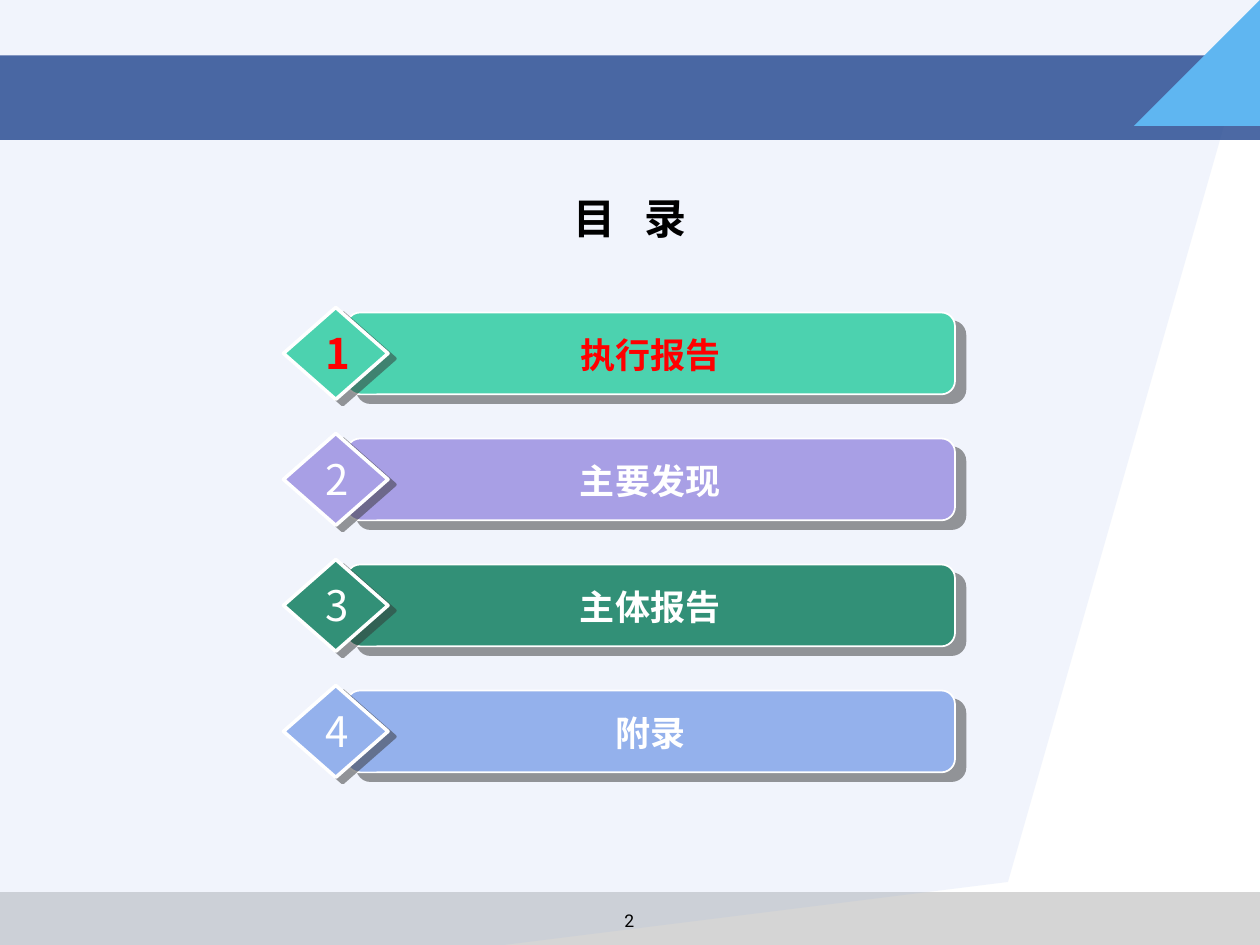
from lxml import etree
from pptx import Presentation
from pptx.dml.color import RGBColor
from pptx.enum.shapes import MSO_SHAPE
from pptx.enum.text import MSO_ANCHOR, MSO_AUTO_SIZE, PP_ALIGN
from pptx.oxml.ns import qn
from pptx.util import Inches, Pt

RECT = MSO_SHAPE.RECTANGLE
ROUND = MSO_SHAPE.ROUNDED_RECTANGLE
DIAMOND = MSO_SHAPE.DIAMOND
MIDDLE = MSO_ANCHOR.MIDDLE
GROW = MSO_AUTO_SIZE.SHAPE_TO_FIT_TEXT
CENTER = PP_ALIGN.CENTER

WHITE = RGBColor(0xFF, 0xFF, 0xFF)
BLACK = RGBColor(0x00, 0x00, 0x00)
RED = RGBColor(0xFF, 0x00, 0x00)
GRAY = RGBColor(0x96, 0x96, 0x96)
NAVY = RGBColor(0x17, 0x3D, 0x89)
SKY = RGBColor(0x5F, 0xB6, 0xF1)
MINT = RGBColor(0x4C, 0xD2, 0xAF)
LILAC = RGBColor(0xA8, 0x9F, 0xE5)
GREEN = RGBColor(0x32, 0x90, 0x77)
BLUE = RGBColor(0x94, 0xB1, 0xEC)

HAN = "Noto Sans CJK SC"


def paint(shape, color, alpha=100):
    shape.shadow.inherit = False
    shape.fill.solid()
    shape.fill.fore_color.rgb = color
    shape.line.fill.background()
    if alpha < 100:
        tint = shape._element.spPr.find(qn("a:solidFill"))[0]
        etree.SubElement(tint, qn("a:alpha"), val=str(alpha * 1000))


def write(shapes, box, texts, size, color, bold=False, face=HAN):
    area = shapes.add_textbox(*[Inches(v) for v in box])
    frame = area.text_frame
    frame.word_wrap = True
    para = frame.paragraphs[0]
    para.alignment = CENTER
    for text in texts:
        run = para.add_run()
        run.text = text
        run.font.size = Pt(size)
        run.font.bold = bold
        run.font.color.rgb = color
        run.font.name = face
        etree.SubElement(run._r.get_or_add_rPr(), qn("a:ea"), typeface=face)
    return frame


prs = Presentation()
prs.slide_width = Inches(10)
prs.slide_height = Inches(7.5)
slide = prs.slides.add_slide(prs.slide_layouts[6])
shapes = slide.shapes

foot = shapes.add_shape(RECT, 0, Inches(7.08), Inches(10), Inches(0.42))
paint(foot, GRAY, 40)

panel = shapes.build_freeform(0, 0, Inches(1))
panel.add_line_segments([(9.76, 0), (7.74, 7.49), (0, 7.5)])
paint(panel.convert_to_shape(), BLUE, 13)

band = shapes.add_shape(RECT, 0, Inches(0.44), Inches(10), Inches(0.67))
paint(band, NAVY, 77)

corner = shapes.build_freeform(9.65, 0.44, Inches(1))
corner.add_line_segments([(9.48, 1.11), (10, 1.11), (10, 0.44)])
paint(corner.convert_to_shape(), SKY)

title = write(shapes, (0.5, 1.42, 9, 0.62), ["目", " ", "录"], 24, BLACK, True)
title.vertical_anchor = MIDDLE
gap = title.paragraphs[0].runs[1]
gap._r.get_or_add_rPr().set("spc", "1120")

items = [
    ("执行报告", MINT, RED, 3.81),
    ("主要发现", LILAC, WHITE, 3.47),
    ("主体报告", GREEN, WHITE, 4.24),
    ("附录", BLUE, WHITE, 3.47),
]
parts = [
    (ROUND, 2.75, 0.04, 4.83, 0.65, 1, 7.8, 40),
    (DIAMOND, 2.25, 0, 0.83, 0.73, 2, 5, 37),
]
for i, (name, color, ink, width) in enumerate(items):
    top = 2.44 + i
    group = shapes.add_group_shape().shapes
    for kind, left, drop, wide, high, line, dist, angle in parts:
        part = group.add_shape(kind, Inches(left), Inches(top + drop),
                               Inches(wide), Inches(high))
        paint(part, color)
        part.line.color.rgb = WHITE
        part.line.width = Pt(line)
        effect = part._element.spPr.find(qn("a:effectLst"))
        shade = etree.SubElement(
            effect, qn("a:outerShdw"), dist=str(Pt(dist)),
            dir=str(angle * 60000), algn="ctr", rotWithShape="0")
        tone = etree.SubElement(shade, qn("a:srgbClr"), val="333333")
        etree.SubElement(tone, qn("a:alpha"), val="50000")
    label = write(group, (5.16 - width / 2, top + 0.16, width, 0.4),
                  [name], 20, ink, True)
    label.auto_size = GROW
    digit = write(group, (2.46, top + 0.11, 0.44, 0.47),
                  [str(i + 1)], 24, ink, i == 0)
    digit.auto_size = GROW

write(shapes, (4.33, 7.17, 1.33, 0.25), ["2"], 10, BLACK, face="Roboto")

prs.save("out.pptx")
